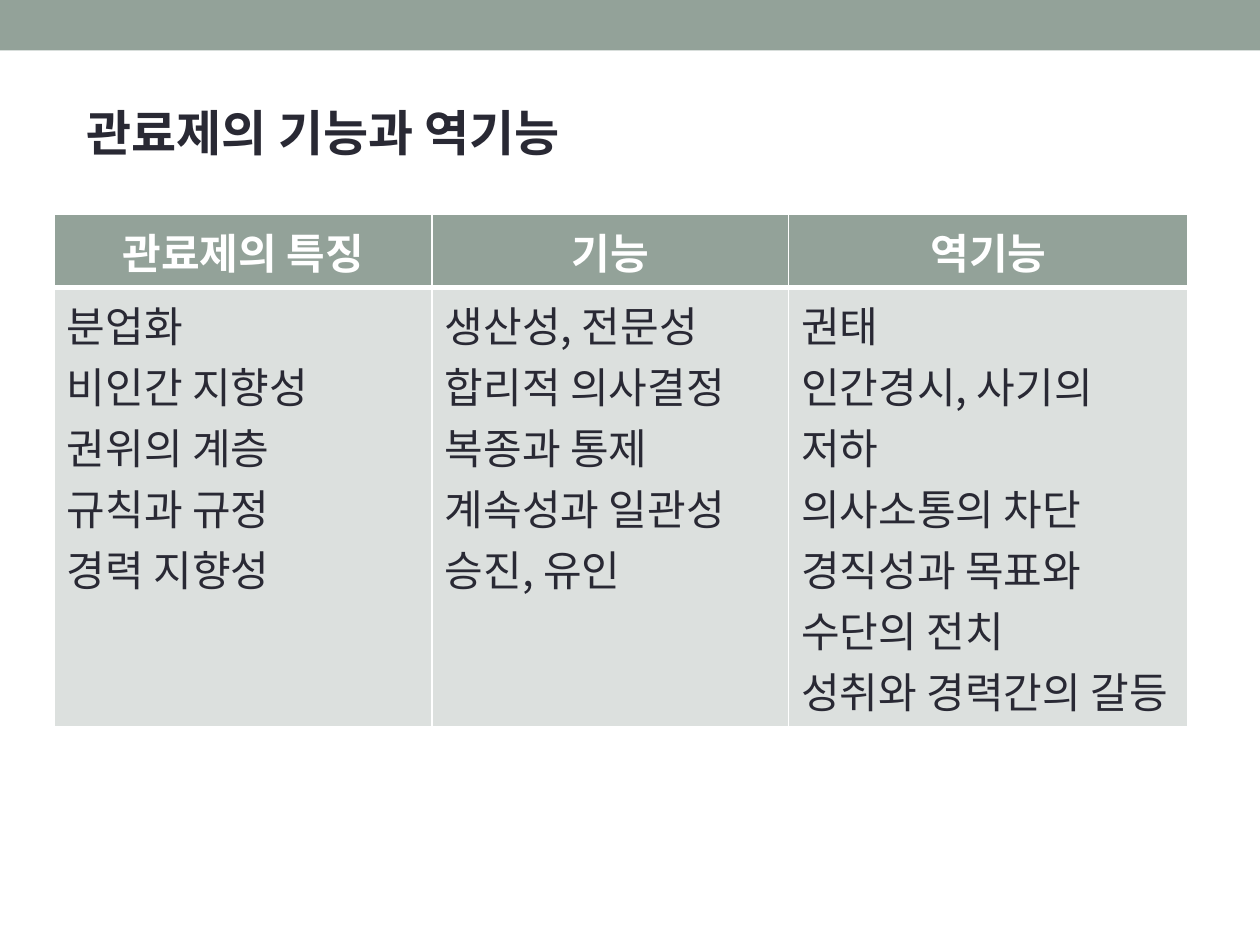
import pptx
import pptx.util
import pptx.dml.color
import pptx.enum.shapes
import pptx.enum.text
import pptx.oxml.ns
from lxml import etree

Inches = pptx.util.Inches
Pt = pptx.util.Pt
qn = pptx.oxml.ns.qn
PP = pptx.enum.text.PP_ALIGN
MID = pptx.enum.text.MSO_ANCHOR.MIDDLE
FONT = "Noto Sans CJK KR"
HUES = {"sage": "93A299", "pale": "DCE0DE", "ink": "292934", "white": "FFFFFF"}


def hue(name):
    return pptx.dml.color.RGBColor.from_string(HUES[name])


def write(para, text, size, color, bold, align):
    para.alignment = align
    run = para.add_run()
    run.text = text
    run.font.name = FONT
    run.font.size = Pt(size)
    run.font.bold = bold
    run.font.color.rgb = hue(color)
    # Korean letters take the East Asian typeface
    etree.SubElement(run.font._element, qn("a:ea"), typeface=FONT)


deck = pptx.Presentation()
deck.slide_width = Inches(10)
deck.slide_height = Inches(7.5)
slide = deck.slides.add_slide(deck.slide_layouts[5])

# Top band
band = slide.shapes.add_shape(
    pptx.enum.shapes.MSO_SHAPE.RECTANGLE, 0, 0, Inches(10), Inches(0.4))
band.shadow.inherit = False
band.fill.solid()
band.fill.fore_color.rgb = hue("sage")
band.line.fill.background()

# Title
title = slide.shapes.title
title.left, title.top = Inches(0.59), Inches(0.76)
title.width, title.height = Inches(4.72), Inches(0.57)
frame = title.text_frame
frame.word_wrap = False
frame.auto_size = pptx.enum.text.MSO_AUTO_SIZE.NONE
frame.vertical_anchor = MID
write(frame.paragraphs[0], "관료제의 기능과 역기능", 28, "ink", True, PP.LEFT)

# Table: heading and lines of each column
cols = [
    (3, "관료제의 특징",
     ["분업화", "비인간 지향성", "권위의 계층", "규칙과 규정", "경력 지향성"]),
    (2.83, "기능",
     ["생산성, 전문성", "합리적 의사결정", "복종과 통제", "계속성과 일관성",
      "승진, 유인"]),
    (3.17, "역기능",
     ["권태", "인간경시, 사기의 저하", "의사소통의 차단",
      "경직성과 목표와 수단의 전치", "성취와 경력간의 갈등"]),
]
rows = [0.58, 3.48]
table = slide.shapes.add_table(
    2, 3, Inches(0.43), Inches(1.7), Inches(9), Inches(sum(rows))).table
for row, tall in zip(table.rows, rows):
    row.height = Inches(tall)

for c, (wide, head, lines) in enumerate(cols):
    table.columns[c].width = Inches(wide)
    looks = [([head], "sage", "white", True, PP.CENTER),
             (lines, "pale", "ink", False, PP.LEFT)]
    for r, (texts, back, color, bold, align) in enumerate(looks):
        cell = table.cell(r, c)
        frame = cell.text_frame
        for i, text in enumerate(texts):
            para = frame.add_paragraph() if i else frame.paragraphs[0]
            write(para, text, 24, color, bold, align)

        # White borders, thick between the two rows
        props = cell._tc.get_or_add_tcPr()
        for side in "LRTB":
            thick = (r, side) in [(0, "B"), (1, "T")]
            edge = etree.SubElement(
                props, qn("a:ln" + side), w=str(Pt(3 if thick else 1)))
            fill = etree.SubElement(edge, qn("a:solidFill"))
            etree.SubElement(fill, qn("a:srgbClr"), val=HUES["white"])
        cell.fill.solid()
        cell.fill.fore_color.rgb = hue(back)

deck.save("out.pptx")
